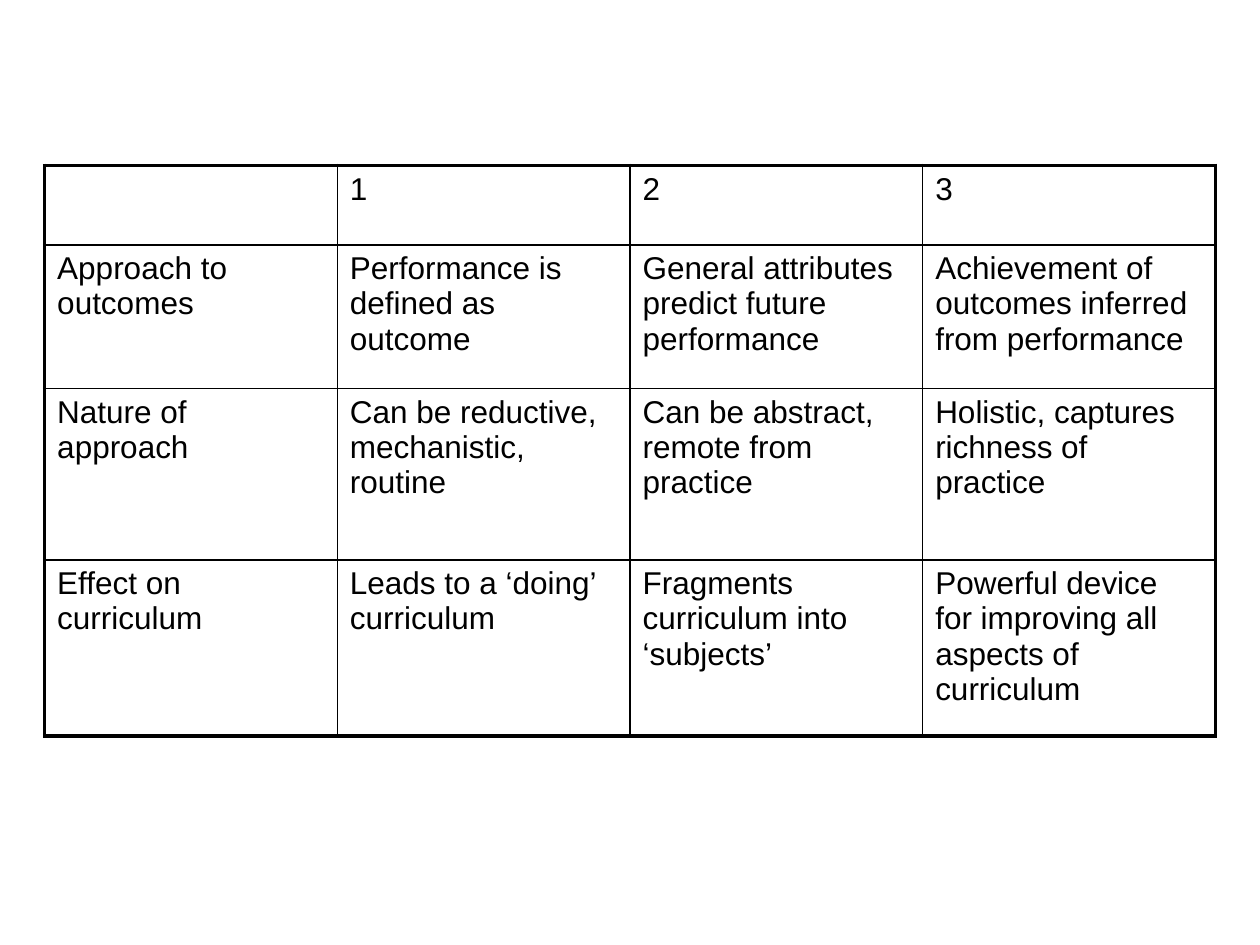
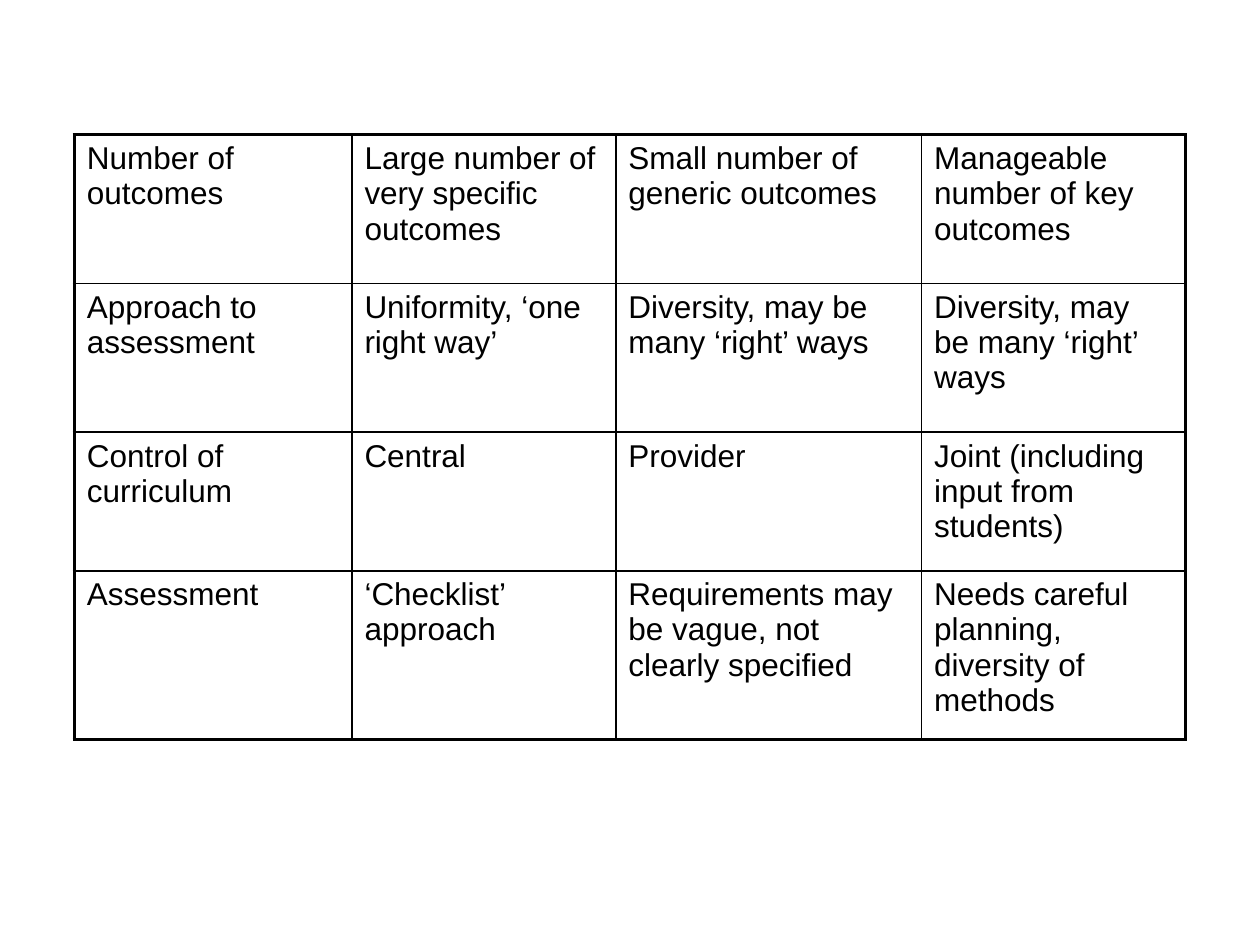
"""Build two slides that compare three approaches to learning outcomes."""
from dataclasses import dataclass

from lxml.etree import SubElement
from pptx import Presentation
from pptx.dml.color import RGBColor
from pptx.oxml.ns import qn
from pptx.presentation import Presentation as Deck
from pptx.table import _Cell
from pptx.util import Pt

BLACK = RGBColor(0x00, 0x00, 0x00)
INNER_LINE = Pt(1)
OUTER_LINE = Pt(2.25)
FONT_FORMAT = {"name": "Arial", "size": Pt(18)}
CELL_FORMAT = {
    "margin_left": Pt(7.2),
    "margin_right": Pt(7.2),
    "margin_top": Pt(3.6),
    "margin_bottom": Pt(3.6),
}
PLAIN_TABLE = {"first_row": False, "horz_banding": False}


@dataclass(frozen=True)
class ComparisonTable:
    left: float
    top: float
    column_widths: tuple[float, ...]
    row_heights: tuple[float, ...]
    rows: tuple[tuple[str, ...], ...]


TABLES = (
    ComparisonTable(
        left=25.5,
        top=94.5,
        column_widths=(167.25,) * 4,
        row_heights=(45.4, 82, 98, 100.8),
        rows=(
            ("", "1", "2", "3"),
            ("Approach to outcomes", "Performance is defined as outcome",
             "General attributes predict future performance",
             "Achievement of outcomes inferred from performance"),
            ("Nature of approach", "Can be reductive, mechanistic, routine",
             "Can be abstract, remote from practice",
             "Holistic, captures richness of practice"),
            ("Effect on curriculum", "Leads to a ‘doing’ curriculum",
             "Fragments curriculum into ‘subjects’",
             "Powerful device for improving all aspects of curriculum"),
        ),
    ),
    ComparisonTable(
        left=42.5,
        top=77,
        column_widths=(158.6, 150.8, 174.7, 150.8),
        row_heights=(85, 85, 79.2, 96.6),
        rows=(
            ("Number of outcomes", "Large number of very specific outcomes",
             "Small number of generic outcomes",
             "Manageable number of key outcomes"),
            ("Approach to assessment", "Uniformity, ‘one right way’",
             "Diversity, may be many ‘right’ ways",
             "Diversity, may be many ‘right’ ways"),
            ("Control of curriculum", "Central", "Provider",
             "Joint (including input from students)"),
            ("Assessment", "‘Checklist’ approach",
             "Requirements may be vague, not clearly specified",
             "Needs careful planning, diversity of methods"),
        ),
    ),
)


def apply_format(target: object, values: dict) -> None:
    """Set every attribute named in the format values."""
    for name, value in values.items():
        setattr(target, name, value)


def set_borders(cell: _Cell, outer_edges: dict[str, bool]) -> None:
    """Draw the cell borders, thicker along the outside of the table."""
    properties = cell._tc.get_or_add_tcPr()
    for edge, is_outer in outer_edges.items():
        width = OUTER_LINE if is_outer else INNER_LINE
        line = SubElement(properties, qn(f"a:ln{edge}"), w=str(width))
        fill = SubElement(line, qn("a:solidFill"))
        SubElement(fill, qn("a:srgbClr"), val=str(BLACK))


def fill_cell(cell: _Cell, text: str) -> None:
    """Write the cell text and remove the styled background."""
    apply_format(cell, CELL_FORMAT)
    cell.fill.background()
    cell.text = text
    font = cell.text_frame.paragraphs[0].font
    apply_format(font, FONT_FORMAT)
    font.color.rgb = BLACK
    for run in cell.text_frame.paragraphs[0].runs:
        apply_format(run.font, FONT_FORMAT)
        run.font.color.rgb = BLACK


def add_comparison_slide(presentation: Deck, content: ComparisonTable) -> None:
    """Add a blank slide that holds one comparison table."""
    slide = presentation.slides.add_slide(presentation.slide_layouts[6])
    row_count, column_count = len(content.row_heights), len(content.column_widths)
    table = slide.shapes.add_table(
        row_count, column_count, Pt(content.left), Pt(content.top),
        Pt(sum(content.column_widths)), Pt(sum(content.row_heights)),
    ).table
    apply_format(table, PLAIN_TABLE)
    for column, width in zip(table.columns, content.column_widths):
        column.width = Pt(width)
    for row, height in zip(table.rows, content.row_heights):
        row.height = Pt(height)
    for row_index, texts in enumerate(content.rows):
        for column_index, text in enumerate(texts):
            cell = table.cell(row_index, column_index)
            set_borders(cell, {
                "L": column_index == 0,
                "R": column_index == column_count - 1,
                "T": row_index == 0,
                "B": row_index == row_count - 1,
            })
            fill_cell(cell, text)


def main() -> None:
    """Create the presentation and save it."""
    presentation = Presentation()
    apply_format(presentation, {"slide_width": Pt(720), "slide_height": Pt(540)})
    for content in TABLES:
        add_comparison_slide(presentation, content)
    presentation.save("out.pptx")


if __name__ == "__main__":
    main()
